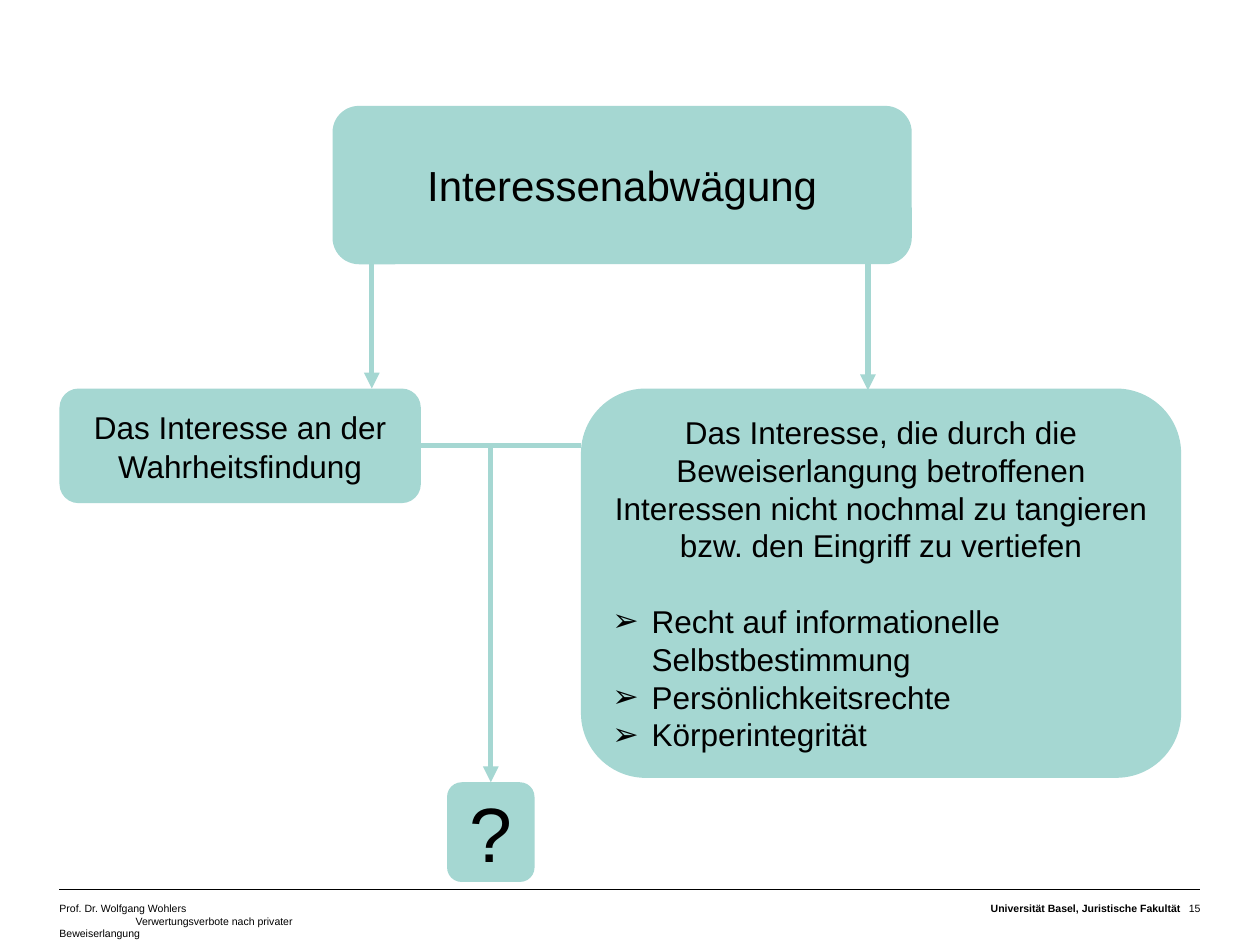
"""Build the slide on weighing interests when admitting evidence."""
from lxml import etree
from pptx import Presentation
from pptx.dml.color import RGBColor
from pptx.enum.shapes import MSO_CONNECTOR, MSO_SHAPE
from pptx.enum.text import MSO_ANCHOR, MSO_AUTO_SIZE, PP_ALIGN
from pptx.oxml.ns import qn
from pptx.util import Pt

LEFT, CENTER, RIGHT = PP_ALIGN.LEFT, PP_ALIGN.CENTER, PP_ALIGN.RIGHT
TOP, MIDDLE = MSO_ANCHOR.TOP, MSO_ANCHOR.MIDDLE
ROUNDED, STRAIGHT = MSO_SHAPE.ROUNDED_RECTANGLE, MSO_CONNECTOR.STRAIGHT
MINT = RGBColor(0xA5, 0xD7, 0xD2)
BLACK = RGBColor(0, 0, 0)
FONT = "Arial"

HEADING = "Interessenabwägung"
TRUTH = "Das Interesse an der Wahrheitsfindung"
PRIVACY = ("Das Interesse, die durch die Beweiserlangung betroffenen Interessen "
           "nicht nochmal zu tangieren bzw. den Eingriff zu vertiefen")
RIGHTS = ["Recht auf informationelle Selbstbestimmung", "Persönlichkeitsrechte",
          "Körperintegrität"]
AUTHOR = "Prof. Dr. Wolfgang Wohlers"
TOPIC = "Verwertungsverbote nach privater Beweiserlangung"
FACULTY = "Universität Basel, Juristische Fakultät"
PAGE = "15"

HEADING_BOX = (190, 60.5, 331, 90.5)
TRUTH_BOX = (34, 222, 206.5, 65.5)
PRIVACY_BOX = (332, 222, 343, 222.5)
RESULT_BOX = (255.5, 447, 50, 57)
FOOTER_TOP, FOOTER_HEIGHT = 514, 14.5
FOOTERS = [
    (34, 170, [AUTHOR, TOPIC], LEFT, False),
    (360, 314.5, [FACULTY], RIGHT, True),
    (674.5, 11.5, [PAGE], RIGHT, False),
]


def write(tf, text, size, align=CENTER, bold=False, spacing=None, before=0,
          margin=0, indent=0, bullet=None, first=True):
    p = tf.paragraphs[0] if first else tf.add_paragraph()
    p.alignment = align
    p.space_before = Pt(before)
    if spacing:
        p.line_spacing = Pt(spacing)
    pPr = p._p.get_or_add_pPr()
    pPr.set("marL", str(Pt(margin)))
    pPr.set("indent", str(Pt(indent)))
    if bullet:
        etree.SubElement(pPr, qn("a:buFont")).set("typeface", FONT)
        etree.SubElement(pPr, qn("a:buChar")).set("char", bullet)
    else:
        etree.SubElement(pPr, qn("a:buNone"))
    r = p.add_run()
    r.text = text
    r.font.name, r.font.size, r.font.bold = FONT, Pt(size), bold
    r.font.color.rgb = BLACK


def frame(s, anchor, margins=(7.2, 3.6, 7.2, 3.6)):
    tf = s.text_frame
    tf.word_wrap = True
    tf.auto_size = MSO_AUTO_SIZE.NONE
    tf.vertical_anchor = anchor
    tf.margin_left, tf.margin_top, tf.margin_right, tf.margin_bottom = map(Pt, margins)
    return tf


def paint(s):
    s.fill.solid()
    s.fill.fore_color.rgb = MINT
    s.line.fill.background()
    s.shadow.inherit = False


def add_box(shapes, box):
    s = shapes.add_shape(ROUNDED, *map(Pt, box))
    paint(s)
    return s


def add_line(shapes, start, end, color=MINT, width=3, arrow=False):
    c = shapes.add_connector(STRAIGHT, *map(Pt, start + end))
    c.line.color.rgb = color
    c.line.width = Pt(width)
    if arrow:
        etree.SubElement(c.line._get_or_add_ln(), qn("a:tailEnd")).set("type", "triangle")
    etree.SubElement(c._element.spPr, qn("a:effectLst"))
    return c


def main():
    prs = Presentation()
    prs.slide_width, prs.slide_height = Pt(720), Pt(540)
    slide = prs.slides.add_slide(prs.slide_layouts[1])
    shapes = slide.shapes
    title = shapes.title._element
    title.getparent().remove(title)

    add_line(shapes, (34, 508), (686, 508), color=BLACK, width=0.25)
    for left, width, lines, align, bold in FOOTERS:
        s = shapes.add_textbox(Pt(left), Pt(FOOTER_TOP), Pt(width), Pt(FOOTER_HEIGHT))
        tf = frame(s, TOP, (0, 1.44, 0, 0))
        for i, text in enumerate(lines):
            write(tf, text, 6, align=align, bold=bold, indent=43.5 * i, first=i == 0)

    heading = add_box(shapes, HEADING_BOX)
    write(frame(heading, MIDDLE), HEADING, 24)

    truth = slide.placeholders[1]
    truth.left, truth.top, truth.width, truth.height = map(Pt, TRUTH_BOX)
    geom = etree.SubElement(truth._element.spPr, qn("a:prstGeom"))
    geom.set("prst", "roundRect")
    etree.SubElement(geom, qn("a:avLst"))
    paint(truth)
    write(frame(truth, MIDDLE, (0, 0, 0, 0)), TRUTH, 18, spacing=22)

    privacy = add_box(shapes, PRIVACY_BOX)
    tf = frame(privacy, MIDDLE)
    write(tf, PRIVACY, 18, spacing=21.6)
    for i, text in enumerate(RIGHTS):
        write(tf, text, 18, align=LEFT, spacing=21.6, before=0 if i else 21.6,
              margin=22.5, indent=-22.5, bullet="➢", first=False)

    result = add_box(shapes, RESULT_BOX)
    write(frame(result, MIDDLE), "?", 44)

    middle = TRUTH_BOX[1] + TRUTH_BOX[3] / 2
    center = RESULT_BOX[0] + RESULT_BOX[2] / 2
    add_line(shapes, (212.5, 149), (212.5, 222), arrow=True)
    add_line(shapes, (496, 151), (496, 223), arrow=True)
    bridge = add_line(shapes, (TRUTH_BOX[0] + TRUTH_BOX[2], middle), (PRIVACY_BOX[0], middle))
    bridge.begin_connect(truth, 3)
    outcome = add_line(shapes, (center, middle), (center, RESULT_BOX[1]), arrow=True)
    outcome.end_connect(result, 0)

    prs.save("out.pptx")


if __name__ == "__main__":
    main()
